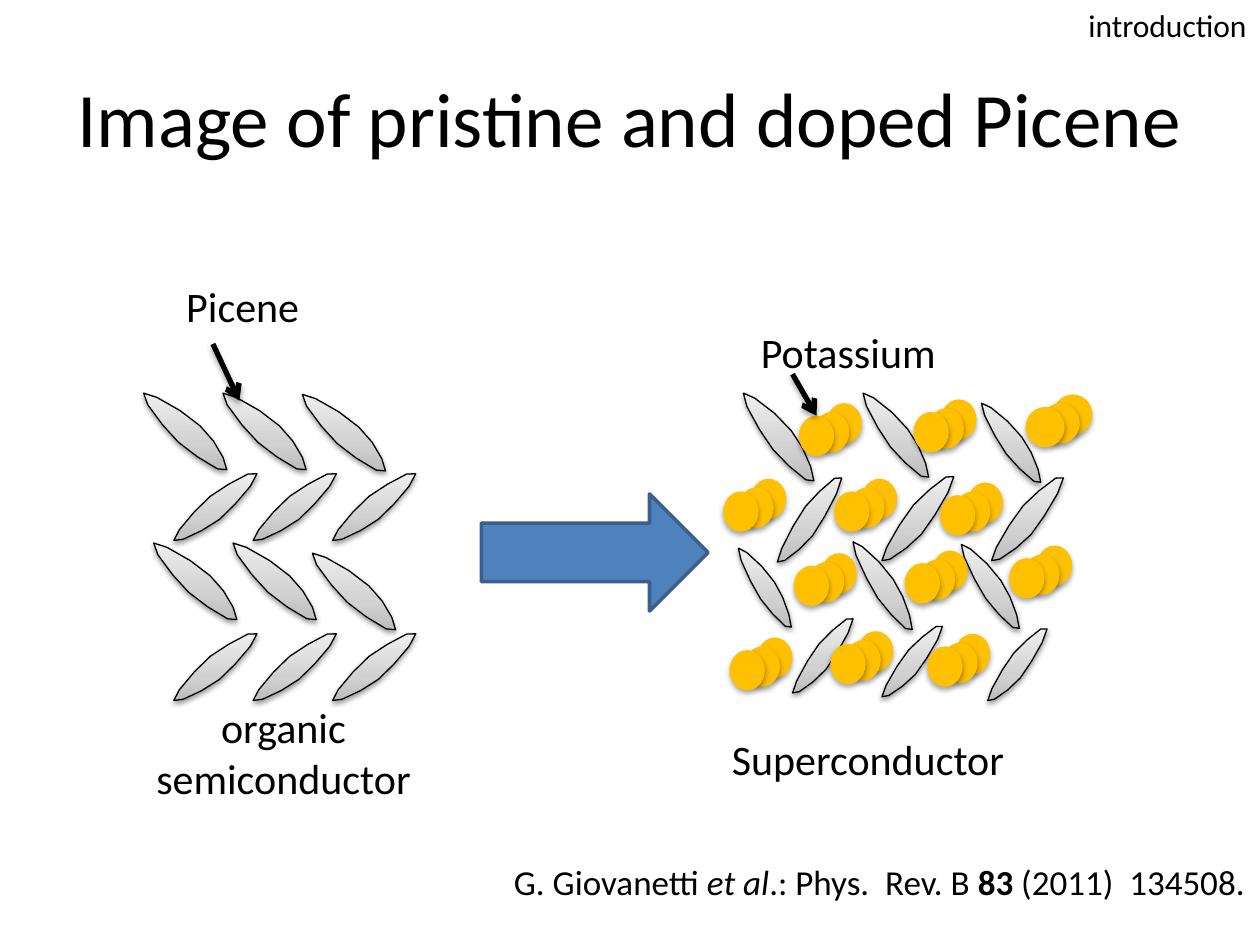
from copy import deepcopy

from pptx import Presentation
from pptx.dml.color import RGBColor
from pptx.enum.shapes import MSO_CONNECTOR, MSO_SHAPE
from pptx.enum.text import MSO_ANCHOR, PP_ALIGN
from pptx.oxml import parse_xml
from pptx.oxml.ns import nsdecls, qn
from pptx.util import Inches, Pt

BLACK = RGBColor(0x00, 0x00, 0x00)
GOLD = RGBColor(0xFF, 0xC0, 0x00)
BLUE = RGBColor(0x4F, 0x81, 0xBD)
DARK_BLUE = RGBColor(0x3A, 0x5F, 0x8C)
GREYS = [(0, RGBColor(0xBD, 0xBD, 0xBD)), (0.35, RGBColor(0xD1, 0xD1, 0xD1)),
         (1, RGBColor(0xEE, 0xEE, 0xEE))]
FONT = "Calibri"

TITLE = "Image of pristine and doped Picene"
LABELS = [
    (["organic", "semiconductor"], (1.06, 5.52, 2.38, 0.91), 24, PP_ALIGN.CENTER),
    (["Superconductor"], (5.71, 5.77, 3.04, 0.5), 24, PP_ALIGN.LEFT),
    (["Potassium"], (5.94, 2.54, 3.55, 0.5), 24, PP_ALIGN.LEFT),
    (["Picene"], (1.38, 2.18, 3.7, 0.5), 24, PP_ALIGN.LEFT),
    (["introduction"], (8.54, 0, 1.47, 0.4), 18, PP_ALIGN.LEFT),
]
CITATION = [("G. Giovanetti ", False, False), ("et al", False, True),
            (".: Phys.  Rev. B ", False, False), ("83", True, False),
            (" (2011)  134508.", False, False)]
POINTERS = [((6.29, 2.97), (6.48, 3.3)), ((1.69, 2.73), (1.9, 3.18))]

RISING = [(0, 1), (-0.02, 0.94), (0.27, 0.52), (0.44, 0.35), (0.61, 0.2),
          (1, -0.09), (1, 0.02), (1, 0.13), (0.71, 0.52), (0.55, 0.69),
          (0.38, 0.85), (0.02, 1.06), (0, 1)]
FALLING = [(0, 0), (0.05, -0.03), (0.51, 0.24), (0.68, 0.42), (0.85, 0.58),
           (1, 0.87), (1, 0.98), (1, 1.08), (0.59, 0.79), (0.42, 0.63),
           (0.26, 0.47), (-0.05, 0.05), (0, 0)]

DOPED_MOLECULES = [
    (RISING, [(6.29, 4.9, 0.48, 0.6), (7, 4.96, 0.48, 0.57), (7.84, 4.98, 0.47, 0.58)]),
    (FALLING, [(5.86, 4.35, 0.42, 0.64), (6.77, 4.3, 0.47, 0.71), (7.63, 4.32, 0.46, 0.68)]),
    (RISING, [(6.17, 3.78, 0.51, 0.68), (7, 3.77, 0.57, 0.68), (7.87, 3.78, 0.57, 0.67)]),
    (FALLING, [(5.9, 3.12, 0.56, 0.71), (6.85, 3.12, 0.52, 0.68), (7.79, 3.2, 0.47, 0.64)]),
]
PRISTINE_ROWS = [
    (RISING, 1.38, 0.54, (5.02, 5.02, 5.02)),
    (FALLING, 1.22, 0.62, (4.31, 4.31, 4.39)),
    (RISING, 1.38, 0.54, (3.75, 3.75, 3.75)),
    (FALLING, 1.14, 0.62, (3.12, 3.12, 3.13)),
]
PRISTINE_STEP, PRISTINE_WIDTH = 0.63, 0.66

POTASSIUM = [
    (5.79, 5.16, 0.28), (6.59, 5.11, 0.28), (7.36, 5.13, 0.28),
    (6.3, 4.49, 0.28), (7.18, 4.47, 0.28), (8.01, 4.43, 0.28),
    (5.74, 3.9, 0.28), (6.62, 3.9, 0.28), (7.46, 3.93, 0.28),
    (6.34, 3.3, 0.28), (7.25, 3.27, 0.28), (8.14, 3.23, 0.31),
]
ATOM_HEIGHT = 0.32
ATOM_OFFSETS = [(0.22, -0.1), (0.12, -0.03), (0, 0)]
CURVE_STEPS = 3

deck = Presentation()
deck.slide_width, deck.slide_height = Inches(10), Inches(7.5)
slide = deck.slides.add_slide(deck.slide_layouts[5])
shapes = slide.shapes


def add_shadow(owner, opacity, distance):
    properties = owner._element.spPr
    for old in properties.findall(qn("a:effectLst")):
        properties.remove(old)
    properties.append(parse_xml(
        f'<a:effectLst {nsdecls("a")}><a:outerShdw blurRad="{Pt(3.1)}" '
        f'dist="{Pt(distance)}" dir="5400000" rotWithShape="0">'
        f'<a:srgbClr val="000000"><a:alpha val="{opacity * 1000}"/></a:srgbClr>'
        '</a:outerShdw></a:effectLst>'))


def curve_points(controls):
    points = []
    for first in range(0, len(controls) - 1, 3):
        a, b, c, d = controls[first:first + 4]
        for step in range(CURVE_STEPS):
            t = step / CURVE_STEPS
            u = 1 - t
            points.append(tuple(
                u**3 * a[i] + 3 * u * u * t * b[i] + 3 * u * t * t * c[i] + t**3 * d[i]
                for i in (0, 1)))
    return points


def add_molecule(outline, left, top, width, height):
    points = [(Inches(left + x * width), Inches(top + y * height))
              for x, y in curve_points(outline)]
    builder = shapes.build_freeform(*points[0])
    builder.add_line_segments(points[1:], close=True)
    molecule = builder.convert_to_shape()
    molecule.fill.gradient()
    molecule.fill.gradient_angle = 90
    stop_list = molecule._element.spPr.find(qn("a:gradFill")).find(qn("a:gsLst"))
    stop_list.insert(1, deepcopy(stop_list[0]))
    for stop, (position, grey) in zip(molecule.fill.gradient_stops, GREYS):
        stop.position = position
        stop.color.rgb = grey
    molecule.line.color.rgb = BLACK
    molecule.line.width = Pt(0.75)
    add_shadow(molecule, 38, 1.6)


def format_run(run, size):
    run.font.name = FONT
    run.font.size = Pt(size)
    run.font.color.rgb = BLACK


def add_label(box):
    frame = shapes.add_textbox(*map(Inches, box)).text_frame
    frame.word_wrap = True
    return frame


title = shapes.title
title.left, title.top, title.width, title.height = map(Inches, (0.5, 0.3, 9, 1.25))
title.text_frame.text = TITLE
title.text_frame.vertical_anchor = MSO_ANCHOR.MIDDLE
title.text_frame.paragraphs[0].alignment = PP_ALIGN.CENTER
format_run(title.text_frame.paragraphs[0].runs[0], 44)

for outline, boxes in DOPED_MOLECULES:
    for box in boxes:
        add_molecule(outline, *box)

for left, top, width in POTASSIUM:
    for dx, dy in ATOM_OFFSETS:
        atom = shapes.add_shape(MSO_SHAPE.OVAL, Inches(left + dx), Inches(top + dy),
                                Inches(width), Inches(ATOM_HEIGHT))
        atom.fill.solid()
        atom.fill.fore_color.rgb = GOLD
        atom.line.fill.background()
        add_shadow(atom, 35, 1.8)

for outline, left, height, tops in PRISTINE_ROWS:
    for column, top in enumerate(tops):
        add_molecule(outline, left + column * PRISTINE_STEP, top, PRISTINE_WIDTH, height)

doping = shapes.add_shape(MSO_SHAPE.RIGHT_ARROW, *map(Inches, (3.82, 3.92, 1.8, 0.93)))
doping.shadow.inherit = False
doping.fill.solid()
doping.fill.fore_color.rgb = BLUE
doping.line.color.rgb = DARK_BLUE
doping.line.width = Pt(2)

for start, end in POINTERS:
    pointer = shapes.add_connector(MSO_CONNECTOR.STRAIGHT, *map(Inches, start + end))
    pointer.line.color.rgb = BLACK
    pointer.line.width = Pt(3)
    pointer._element.spPr.find(qn("a:ln")).append(
        parse_xml(f'<a:tailEnd {nsdecls("a")} type="arrow"/>'))
    add_shadow(pointer, 35, 1.8)

for lines, box, size, alignment in LABELS:
    label = add_label(box)
    label.text = "\n".join(lines)
    for paragraph in label.paragraphs:
        paragraph.alignment = alignment
        format_run(paragraph.runs[0], size)

citation = add_label((3.98, 6.78, 7.87, 0.44)).paragraphs[0]
for words, bold, italic in CITATION:
    run = citation.add_run()
    run.text = words
    format_run(run, 20)
    run.font.bold = bold
    run.font.italic = italic

deck.save("out.pptx")
